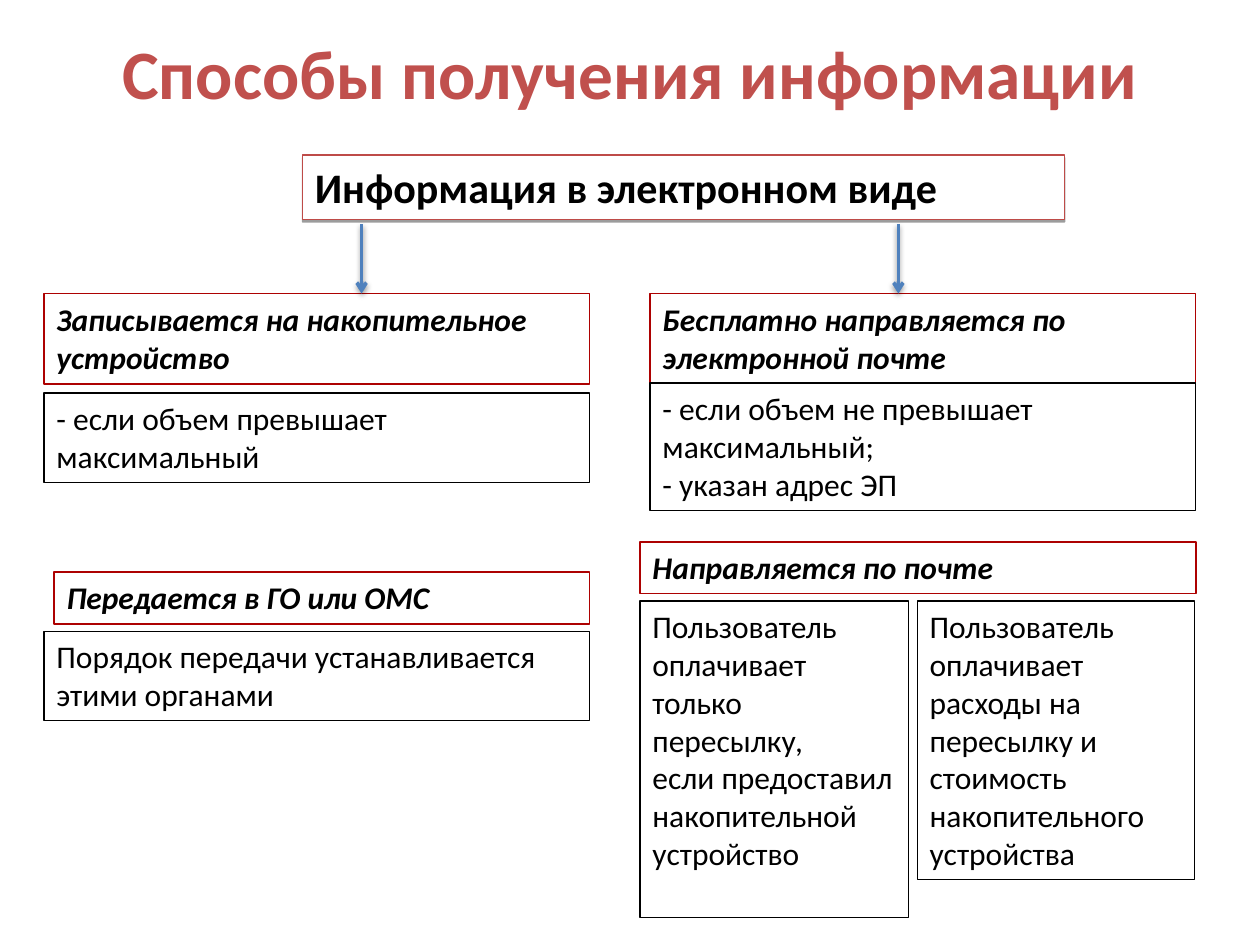
from lxml.etree import SubElement
from pptx import Presentation
from pptx.dml.color import RGBColor
from pptx.enum.shapes import MSO_CONNECTOR, MSO_SHAPE
from pptx.enum.text import MSO_ANCHOR, MSO_AUTO_SIZE, PP_ALIGN
from pptx.oxml.ns import qn
from pptx.util import Inches, Pt

COLORS = {
    "title": "C0504D",
    "text": "000000",
    "header_fill": "FFFFFF",
    "header_line": "BE4B48",
    "heading_line": "AD0101",
    "detail_line": "000000",
    "arrow": "4F81BD",
    "shadow": "000000",
}
FONT = "Calibri"


def color(name):
    return RGBColor.from_string(COLORS[name])


def style_font(font, size, color_name="text", bold=False, italic=False):
    font.name = FONT
    font.size = Pt(size)
    font.bold = bold
    font.italic = italic
    font.color.rgb = color(color_name)


def add_shadow(shape, blur):
    properties = shape._element.spPr
    effects = properties.find(qn("a:effectLst"))
    if effects is None:
        effects = SubElement(properties, qn("a:effectLst"))
    shadow = SubElement(effects, qn("a:outerShdw"), blurRad=str(Pt(blur)),
                        dist=str(Pt(1.6)), dir="5400000", rotWithShape="0")
    tint = SubElement(shadow, qn("a:srgbClr"), val=COLORS["shadow"])
    SubElement(tint, qn("a:alpha"), val="38000")


def add_box(page, box, lines, line_color, line_width, size=18, bold=False, italic=False):
    left, top, width, height = map(Inches, box)
    shape = page.shapes.add_shape(MSO_SHAPE.RECTANGLE, left, top, width, height)
    shape.shadow.inherit = False
    shape.fill.background()
    shape.line.color.rgb = color(line_color)
    shape.line.width = Pt(line_width)
    frame = shape.text_frame
    frame.word_wrap = True
    frame.auto_size = MSO_AUTO_SIZE.SHAPE_TO_FIT_TEXT
    frame.vertical_anchor = MSO_ANCHOR.TOP
    frame.text = "\n".join(lines)
    for para in frame.paragraphs:
        para.alignment = PP_ALIGN.LEFT
        style_font(para.font, size, bold=bold, italic=italic)
    return shape


def add_heading(page, box, text):
    add_box(page, box, [text], "heading_line", 1, bold=True, italic=True)


def add_detail(page, box, *lines):
    add_box(page, box, lines, "detail_line", 0.75)


def add_title(page, box, text):
    title = page.shapes.title
    title.left, title.top, title.width, title.height = map(Inches, box)
    frame = title.text_frame
    frame.text = text
    frame.word_wrap = True
    frame.vertical_anchor = MSO_ANCHOR.MIDDLE
    para = frame.paragraphs[0]
    para.alignment = PP_ALIGN.CENTER
    style_font(para.font, 39.6, "title", bold=True)


def add_header(page, box, text):
    header = add_box(page, box, [text], "header_line", 0.75, size=24, bold=True)
    header.fill.solid()
    header.fill.fore_color.rgb = color("header_fill")
    add_shadow(header, 0)


def add_down_arrow(page, x, top, bottom):
    arrow = page.shapes.add_connector(
        MSO_CONNECTOR.STRAIGHT, Inches(x), Inches(top), Inches(x), Inches(bottom))
    arrow.line.color.rgb = color("arrow")
    arrow.line.width = Pt(2)
    SubElement(arrow.line._get_or_add_ln(), qn("a:tailEnd"), type="arrow")
    add_shadow(arrow, 3.1)


def add_left_column(page, left, top, width):
    # Storage device
    add_heading(page, (left, top, width, 0.72), "Записывается на накопительное устройство")
    add_detail(page, (left, top + 0.79, width, 0.71), "- если объем превышает максимальный")
    # Handover to other bodies
    indent = 0.08
    add_heading(page, (left + indent, top + 2.21, width - indent, 0.41),
                "Передается в ГО или ОМС")
    add_detail(page, (left, top + 2.68, width, 0.71),
               "Порядок передачи устанавливается этими органами")


def add_right_column(page, left, top, width):
    # E-mail
    add_heading(page, (left, top, width, 0.71), "Бесплатно направляется по электронной почте")
    add_detail(page, (left, top + 0.71, width, 1.01),
               "- если объем не превышает максимальный;", "- указан адрес ЭП")
    # Post, with the two ways of paying
    outdent = 0.08
    post_left = left - outdent
    add_heading(page, (post_left, top + 1.97, width + outdent, 0.41), "Направляется по почте")
    add_detail(page, (post_left, top + 2.44, 2.13, 2.51),
               "Пользователь оплачивает только пересылку,",
               "если предоставил накопительной устройство")
    add_detail(page, (post_left + 2.2, top + 2.44, 2.2, 2.21),
               "Пользователь оплачивает расходы на пересылку и стоимость "
               "накопительного устройства")


def main():
    deck = Presentation()
    deck.slide_width, deck.slide_height = Inches(10), Inches(7.5)
    page = deck.slides.add_slide(deck.slide_layouts[5])
    add_title(page, (0.5, 0.3, 9, 0.54), "Способы получения информации")
    add_left_column(page, 0.35, 2.33, 4.33)
    add_right_column(page, 5.16, 2.33, 4.33)
    add_header(page, (2.4, 1.23, 6.05, 0.51), "Информация в электронном виде")
    for x in (2.87, 7.13):
        add_down_arrow(page, x, 1.78, 2.33)
    deck.save("out.pptx")


if __name__ == "__main__":
    main()
